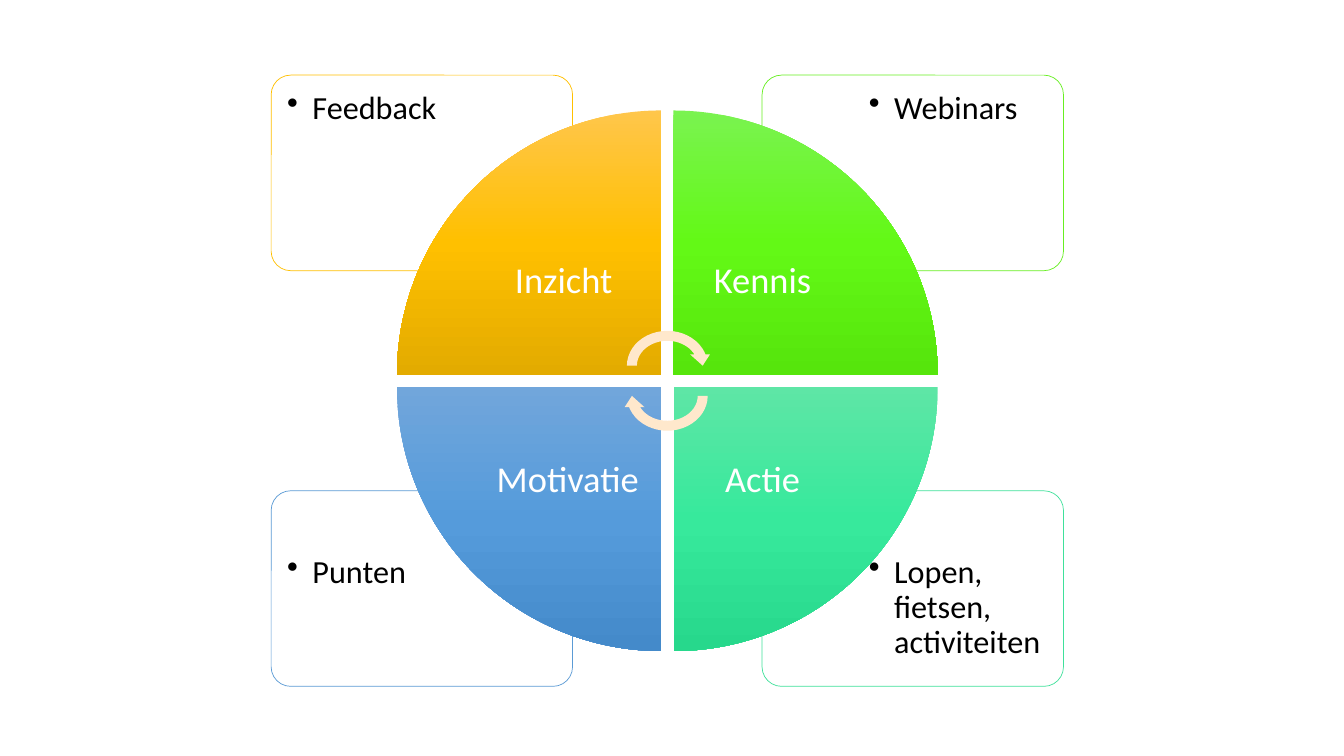
from lxml.etree import SubElement
from pptx import Presentation
from pptx.dml.color import RGBColor
from pptx.enum.shapes import MSO_SHAPE
from pptx.enum.text import MSO_ANCHOR, PP_ALIGN
from pptx.oxml import parse_xml
from pptx.oxml.ns import nsdecls, qn
from pptx.util import Inches, Pt

COLUMNS, ROWS = 160, 90
CENTRE = (79.44, 45.33)
QUADRANTS = [
    ("Inzicht ", "Feedback", -1, -1, 0, "FFC000", ("FFC64B", "FFC000", "E3AB00")),
    ("Kennis ", "Webinars", 1, -1, 90, "67EF21", ("7AF350", "63F916", "56E50C")),
    ("Actie ", "Lopen, fietsen, activiteiten", 1, 1, 180, "3FE19B", ("5EE6A6", "37E99C", "27D88C")),
    ("Motivatie ", "Punten", -1, 1, 270, "5B9BD5", ("71A6DB", "559BDB", "448ACA")),
]


def colour(value):
    return RGBColor.from_string(value)


class CycleSlide:
    """Draws a four-part cycle around a centre, measured in grid cells."""

    font_name = "Calibri"

    def __init__(self, presentation):
        self.slide = presentation.slides.add_slide(presentation.slide_layouts[6])
        self.column = presentation.slide_width / COLUMNS
        self.row = presentation.slide_height / ROWS

    def frame(self, left, top, width, height):
        return (round(left * self.column), round(top * self.row),
                round(width * self.column), round(height * self.row))

    def quadrant(self, side, level, gap, size):
        """Return the frame lying a gap away from the centre on the given side."""
        starts = [middle + (space if sign > 0 else -space - length)
                  for middle, sign, space, length in zip(CENTRE, (side, level), gap, size)]
        return self.frame(*starts, *size)

    def shape(self, kind, frame, fill=None, rotation=0):
        shape = self.slide.shapes.add_shape(kind, *frame)
        shape.shadow.inherit = False
        shape.rotation = rotation
        shape.line.fill.background()
        if fill:
            shape.fill.solid()
            shape.fill.fore_color.rgb = colour(fill)
        return shape

    def card(self, side, level, outline):
        frame = self.quadrant(side, level, (11.28, 13.1), (35.88, 23.28))
        card = self.shape(MSO_SHAPE.ROUNDED_RECTANGLE, frame, "FFFFFF")
        card.adjustments[0] = 0.1
        card.line.color.rgb = colour(outline)
        card.line.width = Pt(0.5)
        white = card.fill._xPr.find(qn("a:solidFill"))[0]
        SubElement(white, qn("a:alpha"), val="90000")

    def wedge(self, side, level, rotation, shades):
        frame = self.quadrant(side, level, (0.74, 0.74), (31.44, 31.44))
        wedge = self.shape(MSO_SHAPE.PIE_WEDGE, frame, shades[0], rotation)
        stops = "".join(f'<a:gs pos="{place * 50000}"><a:srgbClr val="{shade}"/></a:gs>'
                        for place, shade in enumerate(shades))
        gradient = parse_xml(f'<a:gradFill {nsdecls("a")} rotWithShape="0"><a:gsLst>{stops}'
                             '</a:gsLst><a:lin ang="5400000" scaled="0"/></a:gradFill>')
        properties = wedge.fill._xPr
        properties.replace(properties.find(qn("a:solidFill")), gradient)

    def text(self, frame, words, size, ink, inset, bullet=False):
        box = self.slide.shapes.add_textbox(*frame).text_frame
        box.word_wrap = True
        box.margin_left = box.margin_right = box.margin_top = box.margin_bottom = Inches(inset)
        paragraph = box.paragraphs[0]
        paragraph.text = words
        paragraph.line_spacing = 0.9
        if bullet:
            properties = paragraph._p.get_or_add_pPr()
            properties.set("marL", str(Inches(0.25)))
            properties.set("indent", str(Inches(-0.25)))
            SubElement(properties, qn("a:buChar"), char="•")
        else:
            box.vertical_anchor = MSO_ANCHOR.MIDDLE
            paragraph.alignment = PP_ALIGN.CENTER
        paragraph.font.name = self.font_name
        paragraph.font.size = Pt(size)
        paragraph.font.color.rgb = colour(ink)

    def note(self, side, level, words):
        frame = self.quadrant(side, level, (22.56, 19.4), (24.12, 16.44))
        self.text(frame, words, 23, "000000", 0.12, bullet=True)

    def label(self, side, level, words):
        frame = self.quadrant(side, level, (0.74, 0.74), (22.2, 22.2))
        self.text(frame, words, 26, "FFFFFF", 0.2)

    def arrow(self, level, rotation):
        width, height = 10.8, 9.48
        frame = self.frame(CENTRE[0] - width / 2, CENTRE[1] + level * 1.8 - height / 2,
                           width, height)
        self.shape(MSO_SHAPE.CIRCULAR_ARROW, frame, "FFE8CC", rotation)


def main():
    presentation = Presentation()
    presentation.slide_width = Inches(13.33)
    presentation.slide_height = Inches(7.5)
    cycle = CycleSlide(presentation)
    for _, note, side, level, _, outline, _ in reversed(QUADRANTS):
        cycle.card(side, level, outline)
        cycle.note(side, level, note)
    for label, _, side, level, rotation, _, shades in QUADRANTS:
        cycle.wedge(side, level, rotation, shades)
        cycle.label(side, level, label)
    cycle.arrow(-1, 0)
    cycle.arrow(1, 180)
    presentation.save("out.pptx")


if __name__ == "__main__":
    main()
